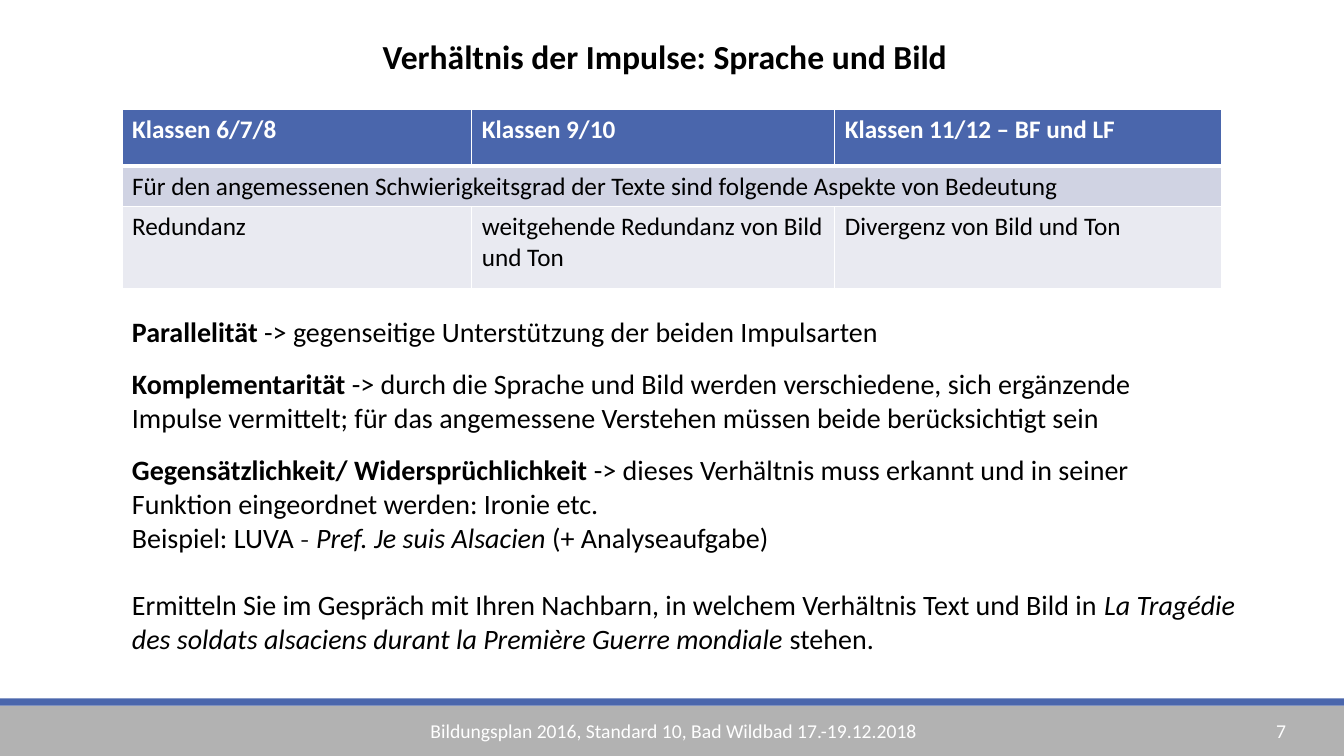
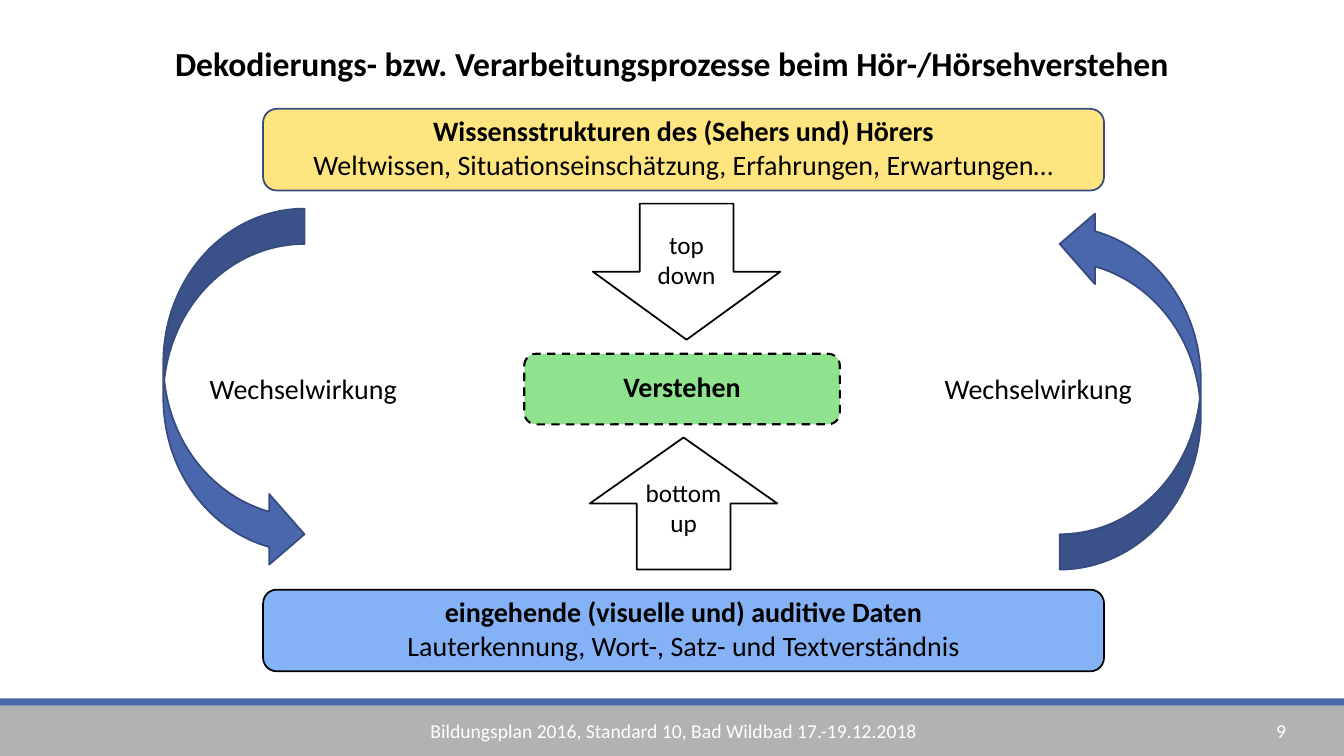
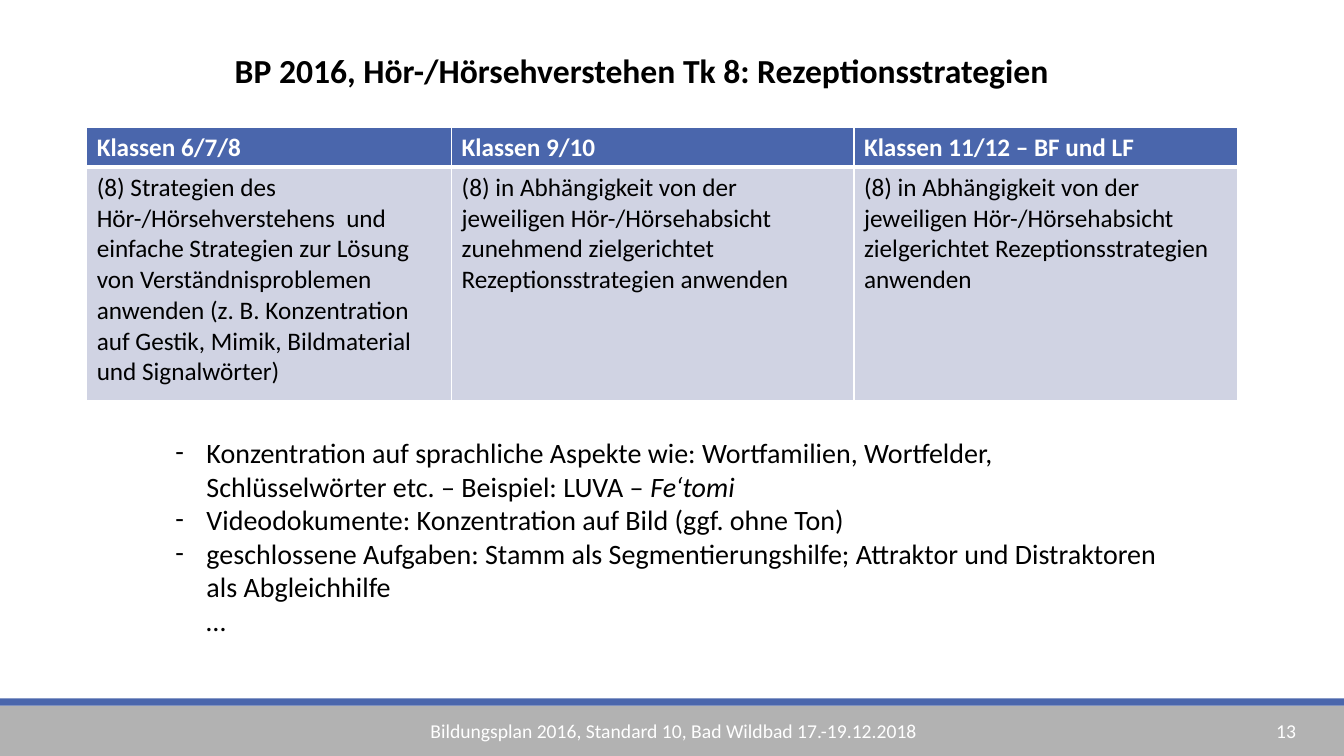
from lxml import etree
from pptx import Presentation
from pptx.dml.color import RGBColor
from pptx.enum import dml, shapes, text
from pptx.oxml import ns
from pptx.util import Inches, Pt

BLACK = RGBColor(0x00, 0x00, 0x00)
WHITE = RGBColor(0xFF, 0xFF, 0xFF)
BLUE = RGBColor(0x4A, 0x66, 0xAC)
DARK_BLUE = RGBColor(0x37, 0x4B, 0x7F)
LIGHT_BLUE = RGBColor(0x85, 0xB2, 0xF6)
YELLOW = RGBColor(0xFF, 0xCC, 0x00)
GREEN = RGBColor(0x33, 0xCC, 0x33)
GREY = RGBColor(0xB2, 0xB2, 0xB2)
BAND_DARK = RGBColor(0xD0, 0xD3, 0xE3)
BAND_LIGHT = RGBColor(0xE9, 0xEA, 0xF1)

FONT = "Calibri"
FOOTER = "Bildungsplan 2016, Standard 10, Bad Wildbad 17.-19.12.2018"
CLASSES = ["Klassen 6/7/8", "Klassen 9/10", "Klassen 11/12 – BF und LF"]
LEFT, CENTER = text.PP_ALIGN.LEFT, text.PP_ALIGN.CENTER
SHAPE = shapes.MSO_SHAPE


def write(frame, paragraphs, size=20, color=BLACK, align=LEFT, bold=None):
    """Fill a frame; a paragraph is a string or a list of (text, style) runs."""
    frame.word_wrap = True
    for index, content in enumerate(paragraphs):
        para = frame.paragraphs[0] if index == 0 else frame.add_paragraph()
        para.alignment = align
        para.font.name = FONT
        para.font.size = Pt(size)
        para.font.color.rgb = color
        para.font.bold = bold
        runs = [(content, "")] if isinstance(content, str) else content
        for words, style in runs:
            span = para.add_run()
            span.text = words
            if style == "b":
                span.font.bold = True
            elif style == "i":
                span.font.italic = True


def add_text(page, box, paragraphs, **style):
    """Add a text box and return its frame."""
    frame = page.shapes.add_textbox(*map(Inches, box)).text_frame
    write(frame, paragraphs, **style)
    return frame


def add_shape(page, kind, box, fill=None, line=None, width=1.25, opacity=100):
    """Add a flat preset shape with optional fill, outline and opacity."""
    shape = page.shapes.add_shape(kind, *map(Inches, box))
    shape.shadow.inherit = False
    if fill is None:
        shape.fill.background()
    else:
        shape.fill.solid()
        shape.fill.fore_color.rgb = fill
        if opacity < 100:
            color = shape._element.spPr.find(".//" + ns.qn("a:srgbClr"))
            etree.SubElement(color, ns.qn("a:alpha"), val=str(opacity * 1000))
    if line is None:
        shape.line.fill.background()
    else:
        shape.line.color.rgb = line
        shape.line.width = Pt(width)
    return shape


def add_label_box(page, box, paragraphs, **look):
    """Add a rounded box with centred text."""
    shape = add_shape(page, SHAPE.ROUNDED_RECTANGLE, box, **look)
    shape.text_frame.vertical_anchor = text.MSO_ANCHOR.MIDDLE
    shape.text_frame.margin_top = 0
    write(shape.text_frame, paragraphs, align=CENTER)
    return shape


def add_block_arrow(page, kind, box, words, top=0, bottom=0):
    """Add an outlined block arrow with its words on the shaft."""
    frame = add_shape(page, kind, box, line=BLACK).text_frame
    frame.margin_left = frame.margin_right = 0
    frame.margin_top, frame.margin_bottom = Inches(top), Inches(bottom)
    frame.vertical_anchor = text.MSO_ANCHOR.MIDDLE
    write(frame, words, size=18, align=CENTER)


def add_bullet(para, char, indent):
    """Give a paragraph a hanging indent, with a bullet if a character is given."""
    props = para._p.get_or_add_pPr()
    props.set("marL", str(Inches(indent)))
    props.set("indent", str(-Inches(indent) if char else 0))
    if char:
        props.insert(0, etree.Element(ns.qn("a:buFont"), typeface=FONT))
        props.insert(1, etree.Element(ns.qn("a:buChar"), char=char))


def underline_cell(cell, color, width):
    """Draw the bottom border of a table cell."""
    border = etree.Element(ns.qn("a:lnB"), w=str(Pt(width)))
    fill = etree.SubElement(border, ns.qn("a:solidFill"))
    etree.SubElement(fill, ns.qn("a:srgbClr"), val=str(color))
    cell._tc.get_or_add_tcPr().insert(0, border)


def add_class_table(page, left, top, widths, heights, rows):
    """Add a table headed by the class levels; a one-cell row spans all columns."""
    frame = page.shapes.add_table(
        len(heights), len(widths), Inches(left), Inches(top),
        Inches(sum(widths)), Inches(sum(heights)))
    table = frame.table
    for column, width in zip(table.columns, widths):
        column.width = Inches(width)
    for row, height in zip(table.rows, heights):
        row.height = Inches(height)
    for r, words in enumerate([CLASSES] + rows):
        if len(words) == 1:
            table.cell(r, 0).merge(table.cell(r, len(widths) - 1))
        fill = BLUE if r == 0 else (BAND_LIGHT, BAND_DARK)[r % 2]
        for c, content in enumerate(words):
            cell = table.cell(r, c)
            cell.fill.solid()
            cell.fill.fore_color.rgb = fill
            if r == 0:
                underline_cell(cell, WHITE, 3)
            write(cell.text_frame, [content], size=18,
                  color=BLACK if r else WHITE, bold=r == 0)


def add_page(deck, number, title, title_box, align=CENTER):
    """Add a blank page with title and footer band."""
    page = deck.slides.add_slide(deck.slide_layouts[6])
    add_shape(page, SHAPE.RECTANGLE, (0, 7, 13.33, 0.5), GREY)
    add_shape(page, SHAPE.RECTANGLE, (0, 6.93, 13.33, 0.07), BLUE)
    add_text(page, (4.17, 7.08, 5.53, 0.34), [FOOTER], size=14, color=WHITE)
    add_text(page, (12.56, 7.08, 0.77, 0.34), [str(number)], size=14, color=WHITE)
    add_text(page, title_box, [title], size=24, align=align, bold=True)
    return page


def build_relation_page(deck):
    """Build the page on how language and image relate."""
    page = add_page(deck, 7, "Verhältnis der Impulse: Sprache und Bild",
                    (0.75, 0.31, 11.69, 0.5))
    add_class_table(page, 1.21, 1.09, (3.47, 3.6, 3.84), (0.56, 0.4, 0.81), [
        ["Für den angemessenen Schwierigkeitsgrad der Texte sind folgende "
         "Aspekte von Bedeutung"],
        ["Redundanz", "weitgehende Redundanz von Bild und Ton",
         "Divergenz von Bild und Ton"]])
    frame = add_text(page, (1.21, 3.07, 10.91, 2.49), [
        [("Parallelität", "b"),
         (" -> gegenseitige Unterstützung der beiden Impulsarten", "")],
        [("Komplementarität", "b"),
         (" -> durch die Sprache und Bild werden verschiedene, sich ergänzende "
          "Impulse vermittelt; für das angemessene Verstehen müssen beide "
          "berücksichtigt sein", "")],
        [("Gegensätzlichkeit/ Widersprüchlichkeit ", "b"),
         ("-> dieses Verhältnis muss erkannt und in seiner Funktion "
          "eingeordnet werden: Ironie etc.", "")],
        [("Beispiel: LUVA ˗ ", ""), ("Pref. Je suis Alsacien ", "i"),
         ("(+ Analyseaufgabe)", "")]])
    for para in frame.paragraphs[1:3]:
        para.space_before = Pt(13.4)
    add_text(page, (1.21, 5.78, 11.24, 0.77), [
        [("Ermitteln Sie im Gespräch mit Ihren Nachbarn, in welchem Verhältnis "
          "Text und Bild in ", ""),
         ("La Tragédie des soldats alsaciens durant la Première Guerre "
          "mondiale ", "i"),
         ("stehen.", "")]])


def build_process_page(deck):
    """Build the diagram of top-down and bottom-up processing."""
    page = add_page(
        deck, 9, "Dekodierungs- bzw. Verarbeitungsprozesse beim Hör-/Hörsehverstehen",
        (0.85, 0.38, 11.63, 0.5))
    add_label_box(page, (2.61, 1.08, 8.34, 0.81), [
        [("Wissensstrukturen des (Sehers und) Hörers", "b")],
        "Weltwissen, Situationseinschätzung, Erfahrungen, Erwartungen…"],
        fill=YELLOW, opacity=50, line=DARK_BLUE)
    add_label_box(page, (2.61, 5.85, 8.34, 0.81), [
        [("eingehende (visuelle und) auditive Daten", "b")],
        "Lauterkennung, Wort-, Satz- und Textverständnis"],
        fill=LIGHT_BLUE, line=BLACK)
    goal = add_label_box(page, (5.2, 3.51, 3.13, 0.7), [[("Verstehen", "b")]],
                         fill=GREEN, opacity=55, line=BLACK, width=1.5)
    goal.line.dash_style = dml.MSO_LINE.DASH
    add_block_arrow(page, SHAPE.DOWN_ARROW, (5.88, 2.02, 1.86, 1.35),
                    ["top", "down"], top=0.1)
    add_block_arrow(page, SHAPE.UP_ARROW, (5.85, 4.34, 1.86, 1.31),
                    ["bottom", "up"], bottom=0.25)
    for arrow_left, turn, label_left in ((1.62, 0, 1.98), (10.51, 180, 9.27)):
        arrow = add_shape(page, SHAPE.CURVED_RIGHT_ARROW,
                          (arrow_left, 2.07, 1.4, 3.58), BLUE, DARK_BLUE)
        arrow.rotation = turn
        add_text(page, (label_left, 3.64, 2.09, 0.44), ["Wechselwirkung"])


def build_strategy_page(deck):
    """Build the page on reception strategies."""
    page = add_page(deck, 13, "BP 2016, Hör-/Hörsehverstehen Tk 8: Rezeptionsstrategien",
                    (2.23, 0.45, 8.53, 0.5), LEFT)
    add_class_table(page, 0.86, 1.26, (3.62, 3.99, 3.81), (0.4, 2.31), [[
        "(8) Strategien des Hör-/Hörsehverstehens  und einfache Strategien zur "
        "Lösung von Verständnisproblemen anwenden (z. B. Konzentration auf "
        "Gestik, Mimik, Bildmaterial und Signalwörter)",
        "(8) in Abhängigkeit von der jeweiligen Hör-/Hörsehabsicht zunehmend "
        "zielgerichtet Rezeptionsstrategien anwenden",
        "(8) in Abhängigkeit von der jeweiligen Hör-/Hörsehabsicht "
        "zielgerichtet Rezeptionsstrategien anwenden"]])
    frame = add_text(page, (1.64, 4.27, 10.13, 2.12), [
        [("Konzentration auf sprachliche Aspekte wie: Wortfamilien, Wortfelder, "
          "Schlüsselwörter etc. – Beispiel: LUVA – ", ""), ("Fe‘tomi", "i")],
        "Videodokumente: Konzentration auf Bild (ggf. ohne Ton)",
        "geschlossene Aufgaben: Stamm als Segmentierungshilfe; Attraktor und "
        "Distraktoren als Abgleichhilfe",
        "…"])
    for para, char in zip(frame.paragraphs, ("-", "-", "-", None)):
        add_bullet(para, char, 0.31)


def main():
    """Build and save the deck."""
    deck = Presentation()
    deck.slide_width, deck.slide_height = Inches(13.33), Inches(7.5)
    build_relation_page(deck)
    build_process_page(deck)
    build_strategy_page(deck)
    deck.save("out.pptx")


if __name__ == "__main__":
    main()
